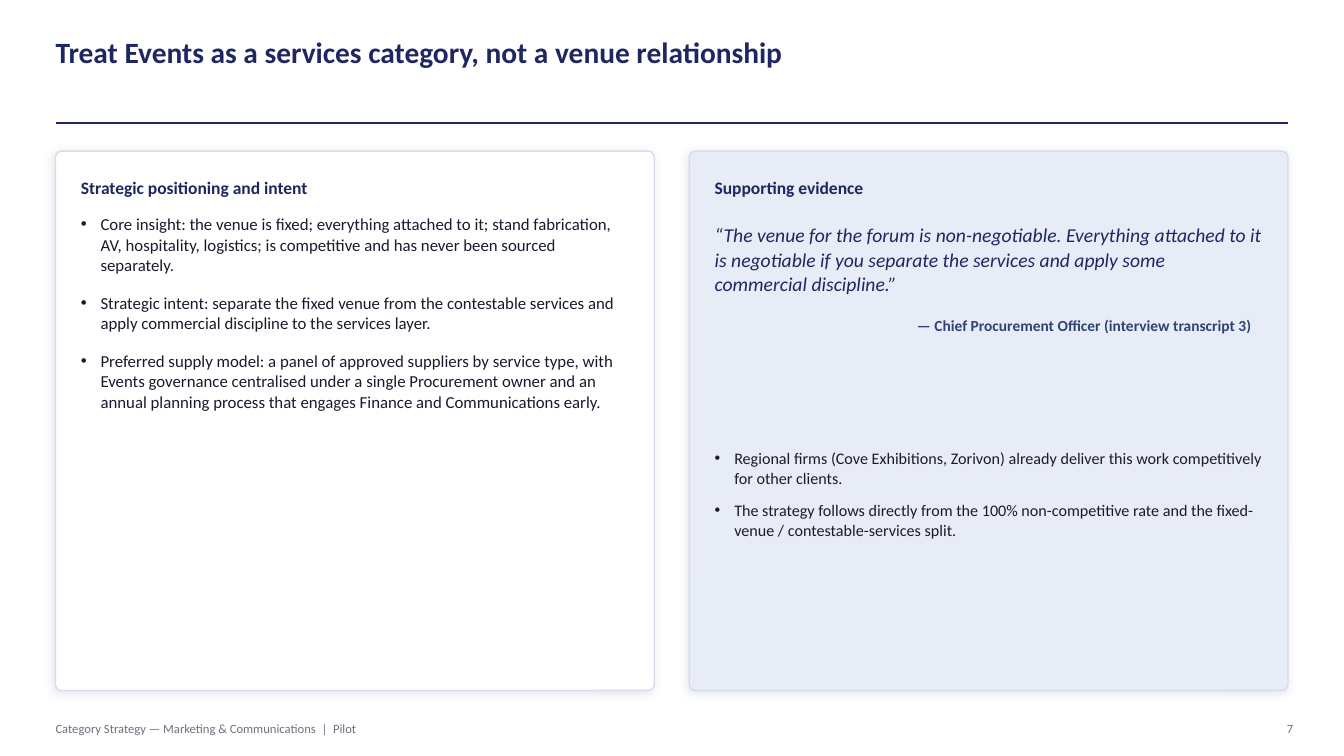
from dataclasses import dataclass

from lxml import etree
from pptx import Presentation
from pptx import util as u
from pptx.dml.color import RGBColor
from pptx.enum import shapes, text
from pptx.oxml import ns

NAVY, INK, GREY = "1E2761", "1A1A2E", "6B7280"
EDGE, SHADE = "D6DCEA", "9AA6C0"
LEFT, PAD = 1.4, 0.64
WIDE, GAP = 15.09, 0.88
TOP, TALL = 3.81, 13.59
INNER = WIDE - 2 * PAD
RIGHT = LEFT + WIDE + GAP


@dataclass
class Card:
    left: float
    fill: str
    head: str
    top: float
    tall: float
    size: float
    after: float
    items: list[str]


CARDS = [
    Card(LEFT, "FFFFFF", "Strategic positioning and intent", 5.38, 11.56, 12, 12, [
        "Core insight: the venue is fixed; everything attached to it; stand fabrication, "
        "AV, hospitality, logistics; is competitive and has never been sourced separately.",
        "Strategic intent: separate the fixed venue from the contestable services and "
        "apply commercial discipline to the services layer.",
        "Preferred supply model: a panel of approved suppliers by service type, with "
        "Events governance centralised under a single Procurement owner and an annual "
        "planning process that engages Finance and Communications early.",
    ]),
    Card(RIGHT, "E8ECF6", "Supporting evidence", 11.3, 5.72, 11.5, 9, [
        "Regional firms (Cove Exhibitions, Zorivon) already deliver this work "
        "competitively for other clients.",
        "The strategy follows directly from the 100% non-competitive rate and the "
        "fixed-venue / contestable-services split.",
    ]),
]


def paint(color, code: str) -> None:
    color.rgb = RGBColor.from_string(code)


def place(shape, left: float, top: float, wide: float, tall: float) -> None:
    shape.left, shape.top = u.Cm(left), u.Cm(top)
    shape.width, shape.height = u.Cm(wide), u.Cm(tall)


def mark(para) -> None:
    """Give a paragraph a hanging round bullet."""
    props = para._p.get_or_add_pPr()
    props.set("marL", str(u.Pt(14)))
    props.set("indent", str(-u.Pt(14)))
    etree.SubElement(props, ns.qn("a:buChar")).set("char", "•")


def write(shape, lines: list[str], *, size: float, color: str = NAVY,
          bold: bool = False, italic: bool = False, middle: bool = False,
          right: bool = False, space: float = 1.0, after: float = 0,
          bullet: bool = False) -> None:
    frame = shape.text_frame
    frame.word_wrap = True
    frame.auto_size = text.MSO_AUTO_SIZE.NONE
    frame.margin_left = frame.margin_right = frame.margin_top = frame.margin_bottom = 0
    frame.vertical_anchor = text.MSO_ANCHOR.MIDDLE if middle else text.MSO_ANCHOR.TOP
    for n, line in enumerate(lines):
        para = frame.add_paragraph() if n else frame.paragraphs[0]
        para.text = line
        if bullet:
            mark(para)
        para.alignment = text.PP_ALIGN.RIGHT if right else text.PP_ALIGN.LEFT
        para.line_spacing = space
        para.space_before, para.space_after = u.Pt(0), u.Pt(after)
        font = para.font
        font.name, font.size = "Calibri", u.Pt(size)
        font.bold, font.italic = bold, italic
        paint(font.color, color)


def label(slide, line: str, left: float, top: float, wide: float, tall: float,
          **style) -> None:
    box = slide.shapes.add_textbox(0, 0, 0, 0)
    place(box, left, top, wide, tall)
    write(box, [line], **style)


def cast(shape) -> None:
    """Add a soft outer shadow."""
    shape.shadow.inherit = False
    glow = shape.element.spPr.find(ns.qn("a:effectLst"))
    outer = etree.SubElement(glow, ns.qn("a:outerShdw"), blurRad=str(u.Pt(6)),
                             dist=str(u.Pt(2)), dir="8100000",
                             algn="bl", rotWithShape="0")
    tint = etree.SubElement(outer, ns.qn("a:srgbClr"), val=SHADE)
    etree.SubElement(tint, ns.qn("a:alpha"), val="28000")


def panel(slide, card: Card, body) -> None:
    """Draw a card behind its heading and bullet list."""
    back = slide.shapes.add_shape(shapes.MSO_SHAPE.ROUNDED_RECTANGLE, 0, 0, 0, 0)
    place(back, card.left, TOP, WIDE, TALL)
    back.adjustments[0] = 0.011
    back.fill.solid()
    paint(back.fill.fore_color, card.fill)
    paint(back.line.color, EDGE)
    back.line.width = u.Pt(1)
    cast(back)
    body.element.addprevious(back.element)
    label(slide, card.head, card.left + PAD, 4.32, INNER, 0.81,
          size=12.5, bold=True, middle=True)
    place(body, card.left + PAD, card.top, INNER, card.tall)
    write(body, card.items, size=card.size, color=INK, space=1.02,
          after=card.after, bullet=True)


def rule(slide) -> None:
    line = slide.shapes.add_connector(shapes.MSO_CONNECTOR.STRAIGHT, u.Cm(LEFT),
                                      u.Cm(3.1), u.Cm(RIGHT + WIDE), u.Cm(3.1))
    paint(line.line.color, NAVY)
    line.line.width = u.Pt(1.25)
    etree.SubElement(line.element.spPr, ns.qn("a:effectLst"))


def main() -> None:
    deck = Presentation()
    deck.slide_width, deck.slide_height = u.Cm(33.87), u.Cm(19.05)
    slide = deck.slides.add_slide(deck.slide_layouts.get_by_name("Two Content"))
    title, *bodies = slide.placeholders
    place(title, LEFT, 0.86, 2 * WIDE + GAP, 2.08)
    write(title, ["Treat Events as a services category, not a venue relationship"],
          size=21, bold=True)
    rule(slide)
    for card, body in zip(CARDS, bodies):
        panel(slide, card, body)
    label(slide, "“The venue for the forum is non-negotiable. Everything attached to it "
          "is negotiable if you separate the services and apply some commercial "
          "discipline.”", RIGHT + PAD, 5.59, INNER, 3.81,
          size=14, italic=True, space=1.05)
    label(slide, "— Chief Procurement Officer (interview transcript 3)",
          23.11, 7.75, INNER, 0.89, size=11, color="2E4374", bold=True, middle=True)
    label(slide, "Category Strategy — Marketing & Communications  |  Pilot",
          LEFT, 17.98, 22.86, 0.76, size=9, color=GREY, middle=True)
    label(slide, "7", 31.32, 17.98, 1.27, 0.76,
          size=9, color=GREY, middle=True, right=True)
    deck.save("out.pptx")


if __name__ == "__main__":
    main()
